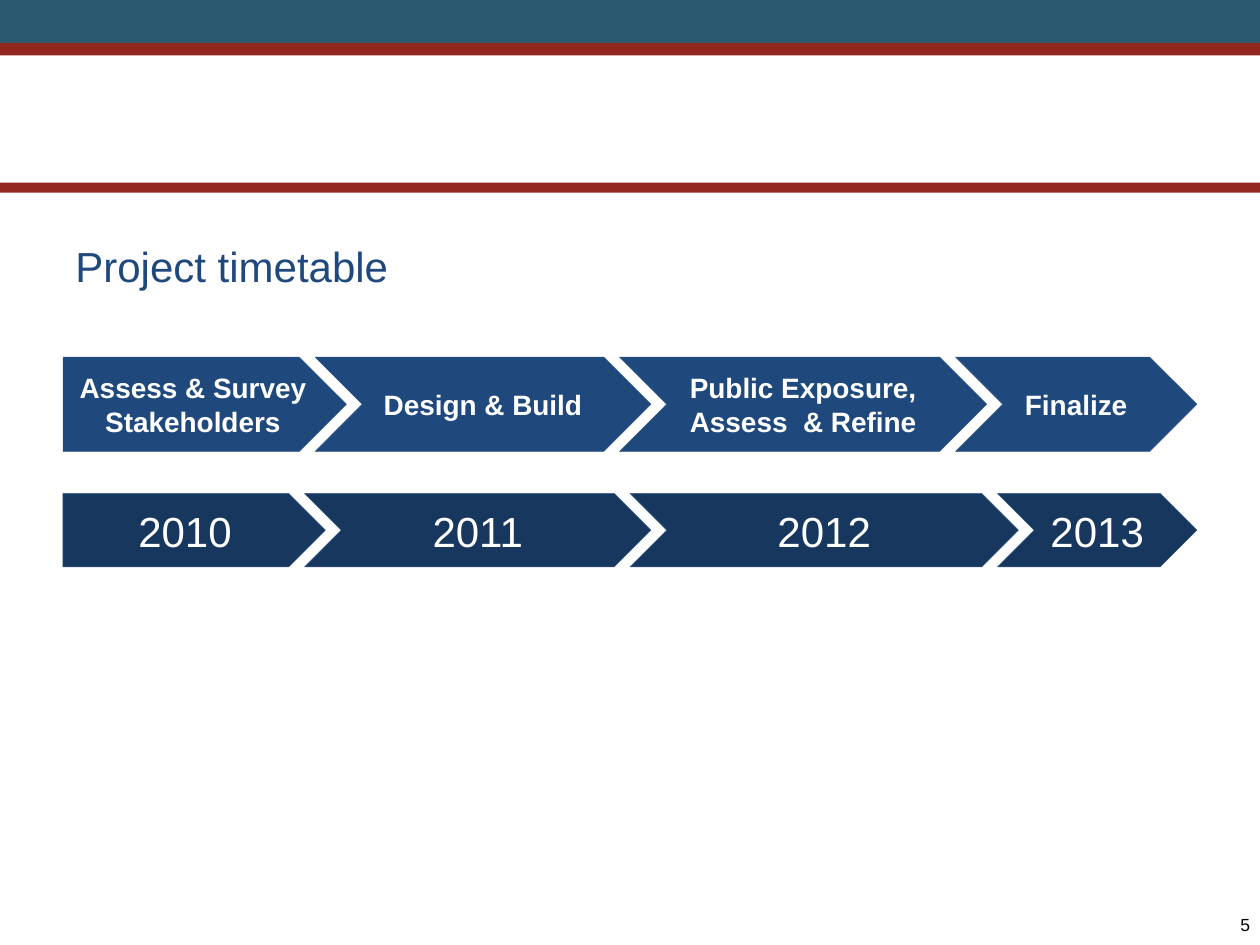
from pptx import Presentation
from pptx.dml.color import RGBColor
from pptx.enum.shapes import MSO_SHAPE
from pptx.enum.text import MSO_ANCHOR, PP_ALIGN
from pptx.util import Inches, Pt

RECT, PLATE, CHEV = MSO_SHAPE.RECTANGLE, MSO_SHAPE.PENTAGON, MSO_SHAPE.CHEVRON
MID = MSO_ANCHOR.MIDDLE
LEFT, MIDST, RIGHT = PP_ALIGN.LEFT, PP_ALIGN.CENTER, PP_ALIGN.RIGHT
HUES = {"teal": "2A5970", "red": "91271F", "blue": "1F497D", "navy": "17375E",
        "edge": "3A5F8C", "white": "FFFFFF", "black": "000000"}
CELL = Inches(1) // 12
PHASES = [("Assess & Survey Stakeholders", 27), ("Design & Build", 32),
          ("Public Exposure, Assess  & Refine", 35), ("Finalize", 23)]
YEARS = [("2010", 25), ("2011", 33), ("2012", 37), ("2013", 19)]


def hue(name):
    """Return the named colour."""
    return RGBColor.from_string(HUES[name])


def write(shape, text, size, tint, align, bold=False):
    """Put one middle-anchored paragraph into a shape."""
    frame = shape.text_frame
    frame.word_wrap = True
    frame.vertical_anchor = MID
    frame.text = text
    para = frame.paragraphs[0]
    para.alignment = align
    for run in para.runs:
        font = run.font
        font.name, font.size, font.bold = "Arial", Pt(size), bold
        font.color.rgb = hue(tint)


def draw(slide, kind, box, fill):
    """Add a flat filled shape without a line."""
    shape = slide.shapes.add_shape(kind, *box)
    shape.shadow.inherit = False
    shape.fill.solid()
    shape.fill.fore_color.rgb = hue(fill)
    shape.line.fill.background()
    return shape


def band(slide, top, tall, fill):
    """Add a stripe across the whole slide."""
    draw(slide, RECT, (0, Inches(top), Inches(10), Inches(tall)), fill)


def label(slide, box, text, size, tint, align, inset=True):
    """Add a text box, with or without insets."""
    shape = slide.shapes.add_textbox(*map(Inches, box))
    write(shape, text, size, tint, align)
    if not inset:
        frame = shape.text_frame
        frame.margin_left = frame.margin_right = 0
        frame.margin_top = frame.margin_bottom = 0


def chain(slide, steps, row, rows, lap, fill, size, bold):
    """Add a row of arrows, each lapping the one before."""
    col = 6
    for num, (text, cols) in enumerate(steps):
        box = [CELL * part for part in (col, row, cols, rows)]
        shape = draw(slide, CHEV if num else PLATE, box, fill)
        shape.line.color.rgb = hue("edge")
        shape.line.width = Pt(0.25)
        write(shape, text, size, "white", MIDST, bold)
        col += cols - lap


def main():
    """Build and save the timetable slide."""
    deck = Presentation()
    deck.slide_width, deck.slide_height = Inches(10), Inches(7.5)
    slide = deck.slides.add_slide(deck.slide_layouts[6])
    band(slide, 0, 0.34, "teal")
    band(slide, 0.34, 0.1, "red")
    band(slide, 1.45, 0.08, "red")
    label(slide, (8.25, 7.25, 1.67, 0.17), "5", 10, "black", RIGHT, False)
    label(slide, (0.5, 1.58, 9, 1.06), "Project timetable", 24, "blue", LEFT)
    chain(slide, PHASES, 34, 9, 3, "blue", 16, True)
    chain(slide, YEARS, 47, 7, 2, "navy", 24, False)
    deck.save("out.pptx")


if __name__ == "__main__":
    main()
